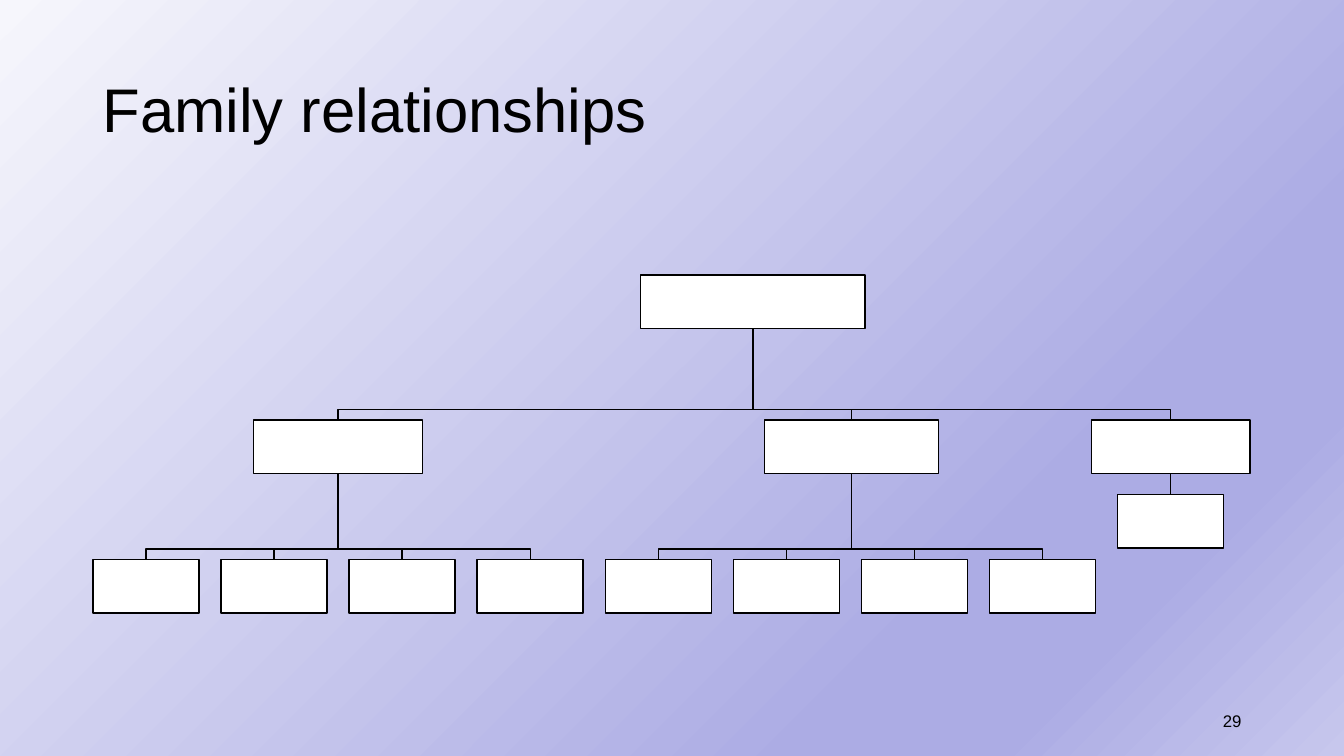
from lxml.etree import SubElement
from pptx import Presentation
from pptx.dml.color import RGBColor
from pptx.enum.shapes import MSO_CONNECTOR, MSO_SHAPE
from pptx.enum.text import MSO_ANCHOR, MSO_AUTO_SIZE, PP_ALIGN
from pptx.oxml.ns import qn
from pptx.util import Pt

PX = 9525  # EMU per px, 96 px to the inch
BLACK = RGBColor(0x00, 0x00, 0x00)
WHITE = RGBColor(0xFF, 0xFF, 0xFF)
BACKGROUND = [(0, RGBColor(0xF6, 0xF6, 0xFC)), (74, RGBColor(0xAC, 0xAC, 0xE4)),
              (83, RGBColor(0xAC, 0xAC, 0xE4)), (100, RGBColor(0xC7, 0xC7, 0xED))]

# Tree geometry: nine columns, all boxes of one height
BOX_H, LEAF_W = 51, 101
ROOT_Y, BRANCH_Y, LEAF_Y, LAST_LEAF_Y = 262, 400, 533, 471
DROP = 10  # from the crossbar down to the child
columns = [139 + 122 * i for i in range(9)]
root = (717, ROOT_Y, 214)  # centre, top, width
branches = [
    ((322, BRANCH_Y, 161), [(x, LEAF_Y, LEAF_W) for x in columns[:4]]),
    ((811, BRANCH_Y, 166), [(x, LEAF_Y, LEAF_W) for x in columns[4:8]]),
    ((1115, BRANCH_Y, 151), [(columns[8], LAST_LEAF_Y, LEAF_W)]),
]


def add_text(tf, text, size, align):
    tf.word_wrap = True
    tf.auto_size = MSO_AUTO_SIZE.NONE
    tf.vertical_anchor = MSO_ANCHOR.MIDDLE
    p = tf.paragraphs[0]
    p.alignment = align
    r = p.add_run()
    r.text = text
    r.font.name = "Arial"
    r.font.size = Pt(size)
    r.font.color.rgb = BLACK
    return p


prs = Presentation()
prs.slide_width, prs.slide_height = 1280 * PX, 720 * PX
s = prs.slides.add_slide(prs.slide_layouts[5])

# Background gradient, from top left to bottom right
fill = s.background.fill
fill.gradient()
fill.gradient_angle = 315
stops = s.background._cSld.find(".//" + qn("a:gsLst"))
for stop in list(stops):
    stops.remove(stop)
for percent, color in BACKGROUND:
    stop = SubElement(stops, qn("a:gs"), pos=str(percent * 1000))
    SubElement(stop, qn("a:srgbClr"), val=str(color))

# Title
title = s.shapes.title
title.left, title.top, title.width, title.height = 88 * PX, 38 * PX, 1104 * PX, 139 * PX
p = add_text(title.text_frame, "Family relationships", 44, PP_ALIGN.LEFT)
p.line_spacing = 0.9

# Bent lines from each parent to its children
for (x, y, w), children in [(root, [box for box, _ in branches])] + branches[:2]:
    for child_x, child_y, _ in children:
        bar_y = child_y - DROP
        builder = s.shapes.build_freeform(x, y + BOX_H, scale=PX)
        builder.add_line_segments(
            [(x, bar_y), (child_x, bar_y), (child_x, child_y)], close=False)
        sp = builder.convert_to_shape()
        sp.shadow.inherit = False
        sp.fill.background()
        sp.line.color.rgb = BLACK
        sp.line.width = Pt(1)

# Boxes
boxes = [root]
for branch, leaves in branches:
    boxes += [branch] + leaves
drawn = []
for x, y, w in boxes:
    sp = s.shapes.add_shape(MSO_SHAPE.RECTANGLE, round((x - w / 2) * PX), y * PX,
                            w * PX, BOX_H * PX)
    sp.shadow.inherit = False
    sp.fill.solid()
    sp.fill.fore_color.rgb = WHITE
    sp.line.color.rgb = BLACK
    sp.line.width = Pt(1)
    drawn.append(sp)

# Straight line from the last branch to its only leaf
line = s.shapes.add_connector(MSO_CONNECTOR.STRAIGHT, 0, 0, 0, 0)
line.begin_connect(drawn[-2], 2)
line.end_connect(drawn[-1], 0)
line.line.color.rgb = BLACK
line.line.width = Pt(1)
SubElement(line._element.spPr, qn("a:effectLst"))

# Slide number
number = s.shapes.add_textbox(904 * PX, 667 * PX, 288 * PX, 38 * PX)
add_text(number.text_frame, "29", 12, PP_ALIGN.RIGHT)

prs.save("out.pptx")
